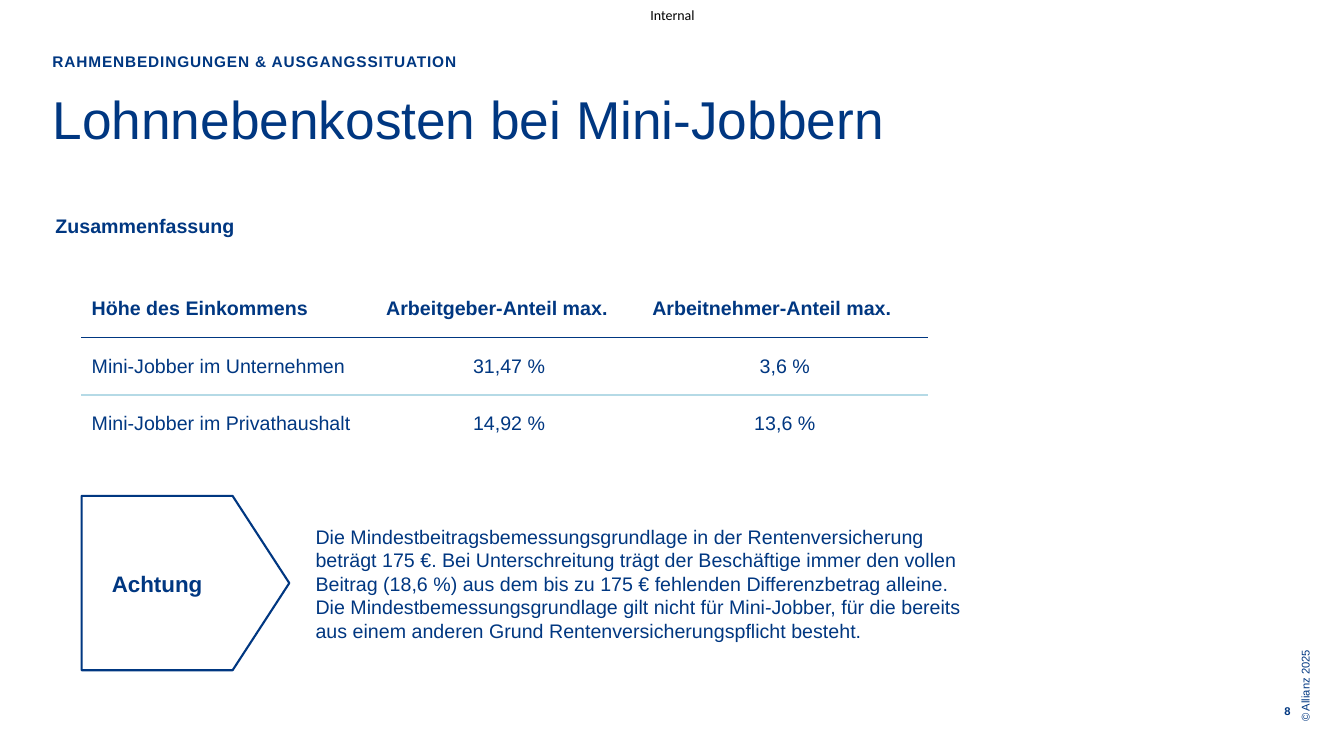
from dataclasses import dataclass

from lxml import etree
from pptx import Presentation
from pptx.dml.color import RGBColor
from pptx.enum.shapes import MSO_SHAPE
from pptx.enum.text import MSO_ANCHOR, PP_ALIGN
from pptx.oxml.ns import qn
from pptx.util import Inches, Pt

CALLOUT = MSO_SHAPE.RIGHT_ARROW_CALLOUT
TOP, MIDDLE = MSO_ANCHOR.TOP, MSO_ANCHOR.MIDDLE
LEFT, CENTER, RIGHT = PP_ALIGN.LEFT, PP_ALIGN.CENTER, PP_ALIGN.RIGHT


@dataclass(frozen=True)
class Theme:
    """Colours, fonts and type sizes of the slide."""
    blue: str = "003781"
    pale: str = "B5DAE6"
    white: str = "FFFFFF"
    black: str = "000000"
    font: str = "Arial"
    label_font: str = "Calibri"
    title: int = 38
    callout: int = 16
    body: int = 14
    kicker: int = 11
    label: int = 10
    small: int = 8


THEME = Theme()
NO_INSETS = (0, 0, 0, 0)
TABLE_INSETS = (0.1, 0.05, 0.1, 0.05)
ROWS = [
    ("Höhe des Einkommens", "Arbeitgeber-Anteil max.", "Arbeitnehmer-Anteil max."),
    ("Mini-Jobber im Unternehmen", "31,47 %", "3,6 %"),
    ("Mini-Jobber im Privathaushalt", "14,92 %", "13,6 %"),
]
RULES = [THEME.white, THEME.blue, THEME.pale, THEME.white]
NOTE = [
    "Die Mindestbeitragsbemessungsgrundlage in der Rentenversicherung beträgt 175 €. "
    "Bei Unterschreitung trägt der Beschäftige immer den vollen Beitrag (18,6 %) "
    "aus dem bis zu 175 € fehlenden Differenzbetrag alleine.",
    "Die Mindestbemessungsgrundlage gilt nicht für Mini-Jobber, für die bereits "
    "aus einem anderen Grund Rentenversicherungspflicht besteht.",
]


def set_frame(frame, insets, anchor):
    """Wrap a text frame and set its insets and anchor."""
    frame.word_wrap = True
    frame.vertical_anchor = anchor
    (frame.margin_left, frame.margin_top,
     frame.margin_right, frame.margin_bottom) = map(Inches, insets)


def write(para, lines, size, bold=False, align=LEFT, color=THEME.blue, font=THEME.font):
    """Write lines into one paragraph, a run for each line."""
    para.alignment = align
    for index, line in enumerate(lines):
        if index:
            para.add_line_break()
        span = para.add_run()
        span.text = line
        span.font.name = font
        span.font.size = Pt(size)
        span.font.bold = bold
        span.font.color.rgb = RGBColor.from_string(color)


def add_text(page, place, lines, size, insets=NO_INSETS, anchor=TOP, **style):
    """Add a text box with one paragraph and return the box."""
    box = page.shapes.add_textbox(*map(Inches, place))
    set_frame(box.text_frame, insets, anchor)
    write(box.text_frame.paragraphs[0], lines, size, **style)
    return box


def add_border(cell, side, color):
    """Draw one border of a table cell."""
    line = etree.SubElement(cell._tc.get_or_add_tcPr(), qn(f"a:ln{side}"), w=str(Pt(1)))
    fill = etree.SubElement(line, qn("a:solidFill"))
    etree.SubElement(fill, qn("a:srgbClr"), val=color)


def add_cost_table(page):
    """Add the table of contribution shares."""
    widths, height = (2.92, 2.64, 2.83), 0.57
    place = (0.81, 2.78, sum(widths), height * len(ROWS))
    table = page.shapes.add_table(len(ROWS), len(widths), *map(Inches, place)).table
    table.first_row = table.horz_banding = False
    for column, width in zip(table.columns, widths):
        column.width = Inches(width)
    for row, texts in enumerate(ROWS):
        table.rows[row].height = Inches(height)
        sides = {"L": THEME.white, "R": THEME.white, "T": RULES[row], "B": RULES[row + 1]}
        for col, text in enumerate(texts):
            cell = table.cell(row, col)
            for side, color in sides.items():
                add_border(cell, side, color)
            cell.fill.background()
            set_frame(cell.text_frame, TABLE_INSETS, MIDDLE)
            cell.vertical_anchor = MIDDLE
            write(cell.text_frame.paragraphs[0], [text], THEME.body, bold=row == 0,
                  align=CENTER if row and col else LEFT)


def add_callout(page, place, text):
    """Add the outlined arrow callout."""
    shape = page.shapes.add_shape(CALLOUT, *map(Inches, place))
    for index, value in enumerate((1, 0.5, 0.325, 0.871)):
        shape.adjustments[index] = value
    shape.shadow.inherit = False
    shape.fill.background()
    shape.line.color.rgb = RGBColor.from_string(THEME.blue)
    shape.line.width = Pt(1.5)
    set_frame(shape.text_frame, (0.13, 0.33, 0.13, 0.33), MIDDLE)
    write(shape.text_frame.paragraphs[0], [text], THEME.callout, bold=True, align=CENTER)


def add_heading(page):
    """Add the kicker, the title and the subheading."""
    kicker = add_text(page, (0.52, 0.52, 10.2, 0.28),
                      ["RAHMENBEDINGUNGEN & AUSGANGSSITUATION"], THEME.kicker, bold=True)
    kicker.text_frame.paragraphs[0].runs[0].font._element.set("spc", "60")
    title = add_text(page, (0.52, 0.96, 10.75, 1),
                     ["Lohnnebenkosten bei Mini-Jobbern"], THEME.title)
    title.text_frame.paragraphs[0].line_spacing = Pt(THEME.title)
    add_text(page, (0.55, 2.12, 8.9, 5.29), ["Zusammenfassung"], THEME.body, bold=True)


def add_margin_labels(page):
    """Add the classification, page number and copyright line."""
    add_text(page, (6.3, 0, 0.74, 0.29), ["Internal"], THEME.label, anchor=MIDDLE,
             align=CENTER, color=THEME.black, font=THEME.label_font)
    number = add_text(page, (12.51, 6.97, 0.29, 0.16), ["8"], THEME.small,
                      anchor=MIDDLE, bold=True, align=RIGHT)
    number.text_frame.paragraphs[0].line_spacing = Pt(10)
    notice = add_text(page, (12.21, 6.48, 1.4, 0.16), ["© Allianz 2025"], THEME.small,
                      insets=TABLE_INSETS)
    notice.rotation = 270


def main():
    """Build the slide and save the deck."""
    deck = Presentation()
    deck.slide_width, deck.slide_height = Inches(13.33), Inches(7.5)
    page = deck.slides.add_slide(deck.slide_layouts[6])
    add_margin_labels(page)
    add_heading(page)
    add_cost_table(page)
    add_text(page, (0.81, 4.92, 9.08, 1.74), NOTE, THEME.body,
             insets=(2.32, 0.12, 0.12, 0.12), anchor=MIDDLE)
    add_callout(page, (0.81, 4.92, 2.06, 1.73), "Achtung")
    deck.save("out.pptx")


if __name__ == "__main__":
    main()
